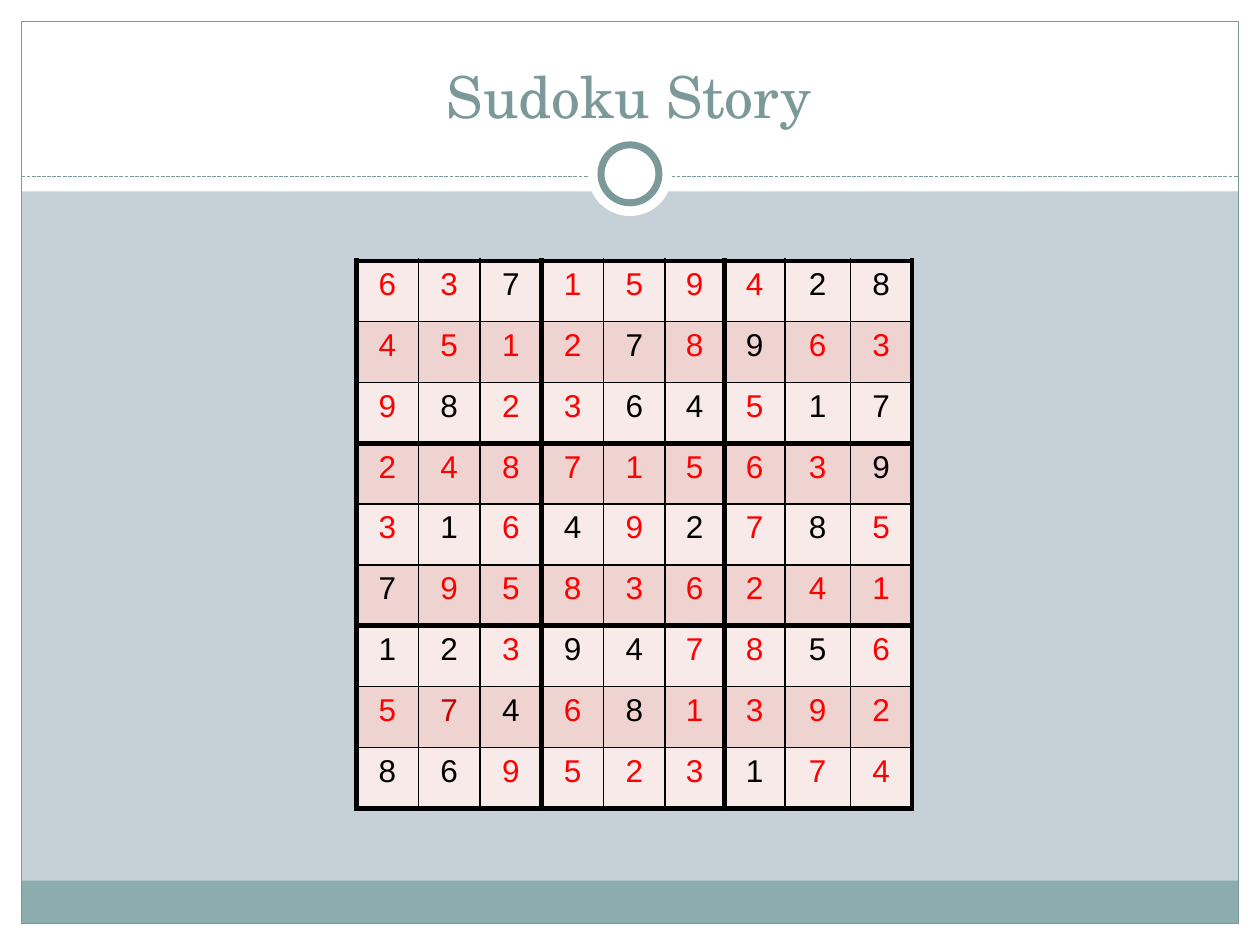
"""Build the Sudoku Story slide on a grid of 100 columns by 75 rows."""
from dataclasses import dataclass

from lxml import etree
from pptx import Presentation
from pptx import util as u
from pptx.dml.color import RGBColor
from pptx.enum import dml, shapes, text
from pptx.oxml import ns

COLUMNS, ROWS = 100, 75
UNIT = u.Inches(10) // COLUMNS
MARGIN = 1.7
BOX_SIZE = 3

PUZZLE = ("..7....28", "....7.9..", ".8..64.17",
          "........9", ".1.4.2.8.", "7........",
          "12.94..5.", "..4.8....", "86....1..")
SOLUTION = ("637159428", "451278963", "982364517",
            "248715639", "316492785", "795836241",
            "123947856", "574681392", "869523174")
DARK_ANSWER = (7, 1)
COLUMN_WIDTHS = (4.9, 4.9, 4.9, 4.9, 4.9, 4.7, 4.8, 5.2, 4.9)
ROW_HEIGHT = 4.83


@dataclass(frozen=True)
class Theme:
    """Colours, fonts and sizes of the slide."""
    background: str = "C5D1D7"
    white: str = "FFFFFF"
    accent: str = "7C999A"
    footer: str = "8CADAE"
    given: str = "000000"
    answer: str = "FF0000"
    dark_answer: str = "C40000"
    bands: tuple = ("F7EAE9", "EED3D0")
    title_font: str = "TeX Gyre Schola"
    digit_font: str = "Arial"
    title_size: int = 33
    digit_size: int = 18
    hairline: float = 0.75
    ring: float = 4
    thin: float = 1
    thick: float = 3


THEME = Theme()


def colour(value):
    """Turn a hex value into a colour."""
    return RGBColor.from_string(value)


def grid(*lengths):
    """Turn grid units into slide lengths."""
    return [round(length * UNIT) for length in lengths]


def add_shape(page, kind, area, fill=None, line=None, width=THEME.hairline):
    """Add a flat preset shape."""
    shape = page.shapes.add_shape(kind, *grid(*area))
    shape.shadow.inherit = False
    if fill:
        shape.fill.solid()
        shape.fill.fore_color.rgb = colour(fill)
    else:
        shape.fill.background()
    if line:
        shape.line.color.rgb = colour(line)
        shape.line.width = u.Pt(width)
    else:
        shape.line.fill.background()


def add_circle(page, centre, size, **style):
    """Add a circle around a centre."""
    left, top = (value - size / 2 for value in centre)
    add_shape(page, shapes.MSO_SHAPE.OVAL, (left, top, size, size), **style)


def add_dashed_line(page, row):
    """Add a dashed rule between the side margins."""
    line = page.shapes.add_connector(
        shapes.MSO_CONNECTOR.STRAIGHT,
        *grid(MARGIN, row, COLUMNS - MARGIN, row))
    line.line.color.rgb = colour(THEME.accent)
    line.line.width = u.Pt(THEME.hairline)
    line.line.dash_style = dml.MSO_LINE.SQUARE_DOT
    properties = line._element.spPr
    etree.SubElement(properties, ns.qn("a:effectLst"))
    properties.find(ns.qn("a:ln")).find(ns.qn("a:prstDash")).set("val", "sysDash")


def style_paragraph(para, font, size, ink):
    """Centre a paragraph and set its font."""
    para.alignment = text.PP_ALIGN.CENTER
    para.font.name = font
    para.font.size = u.Pt(size)
    para.font.color.rgb = colour(ink)


def add_title(page, wording):
    """Add the centred title."""
    box = page.shapes.add_textbox(*grid(3.3, 2.5, 93.3, 8.3))
    frame = box.text_frame
    frame.word_wrap = True
    frame.vertical_anchor = text.MSO_ANCHOR.BOTTOM
    frame.text = wording
    style_paragraph(frame.paragraphs[0], THEME.title_font,
                    THEME.title_size, THEME.accent)


def add_borders(cell, row, column):
    """Draw thick lines around each box of the puzzle and thin ones inside."""
    last = BOX_SIZE - 1
    thick_sides = {"lnL": column % BOX_SIZE == 0,
                   "lnR": column % BOX_SIZE == last,
                   "lnT": row % BOX_SIZE == 0,
                   "lnB": row % BOX_SIZE == last}
    properties = cell._tc.get_or_add_tcPr()
    for side, is_thick in thick_sides.items():
        width = u.Pt(THEME.thick if is_thick else THEME.thin)
        line = etree.SubElement(properties, ns.qn(f"a:{side}"), w=str(width))
        fill = etree.SubElement(line, ns.qn("a:solidFill"))
        etree.SubElement(fill, ns.qn("a:srgbClr"), val=THEME.given)


def digit_colour(row, column):
    """Tell given digits from answers."""
    if (row, column) == DARK_ANSWER:
        return THEME.dark_answer
    is_given = PUZZLE[row][column] == SOLUTION[row][column]
    return THEME.given if is_given else THEME.answer


def add_sudoku(page):
    """Add the solved puzzle as a table."""
    count = len(SOLUTION)
    area = (28.3, 20.7, sum(COLUMN_WIDTHS), count * ROW_HEIGHT)
    table = page.shapes.add_table(count, count, *grid(*area)).table
    for column, width in zip(table.columns, grid(*COLUMN_WIDTHS)):
        column.width = width
    for row, digits in enumerate(SOLUTION):
        table.rows[row].height = grid(ROW_HEIGHT)[0]
        for column, digit in enumerate(digits):
            cell = table.cell(row, column)
            cell.text = digit
            style_paragraph(cell.text_frame.paragraphs[0], THEME.digit_font,
                            THEME.digit_size, digit_colour(row, column))
            add_borders(cell, row, column)
            cell.fill.solid()
            cell.fill.fore_color.rgb = colour(THEME.bands[row % 2])


def add_backdrop(page):
    """Add the white edges, footer band, frame, rule and ring."""
    page.background.fill.solid()
    page.background.fill.fore_color.rgb = colour(THEME.background)
    rectangle = shapes.MSO_SHAPE.RECTANGLE
    inner_width, inner_height = COLUMNS - 2 * MARGIN, ROWS - 2 * MARGIN
    for edge in ((0, ROWS - MARGIN, COLUMNS, MARGIN), (0, 0, COLUMNS, 15.2),
                 (0, 0, MARGIN, ROWS), (COLUMNS - MARGIN, 0, MARGIN, ROWS)):
        add_shape(page, rectangle, edge, fill=THEME.white)
    add_shape(page, rectangle, (MARGIN, 69.9, inner_width, 3.4), fill=THEME.footer)
    add_shape(page, rectangle, (MARGIN, MARGIN, inner_width, inner_height),
              line=THEME.accent)
    add_dashed_line(page, 14)
    centre = (COLUMNS / 2, 13.8)
    add_circle(page, centre, 6.7, fill=THEME.white)
    add_circle(page, centre, 4.6, fill=THEME.white,
               line=THEME.accent, width=THEME.ring)


def main():
    """Build and save the deck."""
    deck = Presentation()
    deck.slide_width, deck.slide_height = COLUMNS * UNIT, ROWS * UNIT
    page = deck.slides.add_slide(deck.slide_layouts[6])
    add_backdrop(page)
    add_title(page, "Sudoku Story")
    add_sudoku(page)
    deck.save("out.pptx")


if __name__ == "__main__":
    main()
